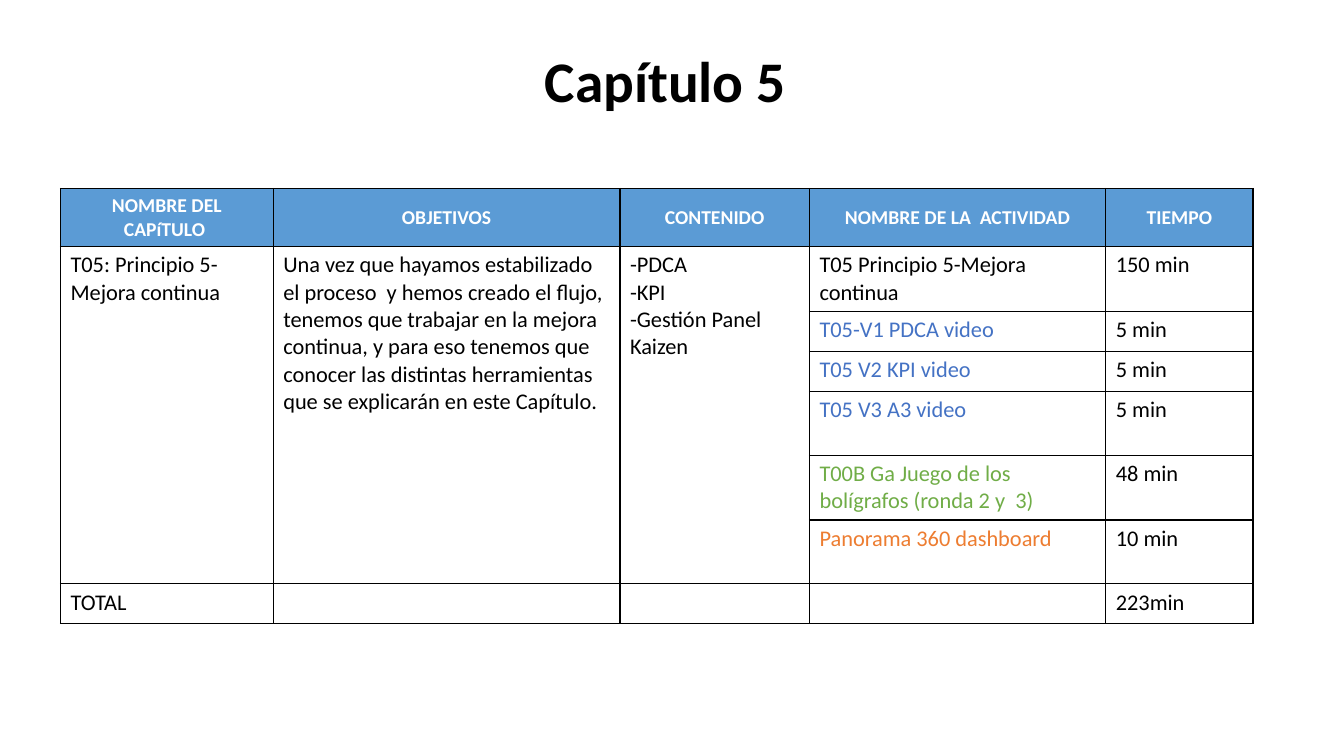
"""Builds the slide that lists the activities and times of Capítulo 5."""
import pptx
import pptx.dml.color
import pptx.enum.text
import pptx.oxml
import pptx.oxml.ns
import pptx.util

COLORS = {"black": "000000", "white": "FFFFFF", "header": "5B9BD5",
          "video": "4472C4", "game": "70AD47", "tour": "ED7D31"}
ALIGN = pptx.enum.text.PP_ALIGN
ANCHOR = pptx.enum.text.MSO_ANCHOR

HEADINGS = ["NOMBRE DEL CAPíTULO ", "OBJETIVOS", "CONTENIDO",
            "NOMBRE DE LA  ACTIVIDAD", "TIEMPO"]
CHAPTER = [
    ["T05: Principio 5-Mejora continua"],
    ["Una vez que hayamos estabilizado el proceso  y hemos creado el flujo, "
     "tenemos que trabajar en la mejora continua, y para eso tenemos que "
     "conocer las distintas herramientas que se explicarán en este Capítulo."],
    ["-PDCA", "-KPI", "-Gestión Panel Kaizen"],
]
ACTIVITIES = [
    ("T05 Principio 5-Mejora continua", "black", "150 min"),
    ("T05-V1 PDCA video", "video", "5 min"),
    ("T05 V2 KPI video", "video", "5 min"),
    ("T05 V3 A3 video", "video", "5 min"),
    ("T00B Ga Juego de los bolígrafos (ronda 2 y  3)", "game", "48 min"),
    ("Panorama 360 dashboard", "tour", "10 min"),
]
TOTALS = ["TOTAL", "", "", "", "223min"]
COLUMN_SHARES = [15.83, 25.8, 14.1, 22.05, 10.95]
HEADER_SHARE, TALL, SHORT = 7.5, 8.45, 5.3
ROW_SHARES = [HEADER_SHARE, TALL, SHORT, SHORT, TALL, TALL, TALL, SHORT]


class ChapterDeck:
    """Holds the style and the current slide; lengths are percent of the slide."""

    font = "Calibri"

    def __init__(self):
        self.deck = pptx.Presentation()
        self.deck.slide_width = pptx.util.Inches(13.33)
        self.deck.slide_height = pptx.util.Inches(7.5)
        self.slide = self.deck.slides.add_slide(self.deck.slide_layouts[6])

    def x(self, share):
        """Turns a percentage of the slide width into a length."""
        return round(self.deck.slide_width * share / 100)

    def y(self, share):
        """Turns a percentage of the slide height into a length."""
        return round(self.deck.slide_height * share / 100)

    def add_lines(self, frame, lines, size, color="black", bold=False, align=ALIGN.LEFT):
        """Sets each line as a paragraph with one styled run."""
        for index, line in enumerate(lines):
            paragraph = frame.add_paragraph() if index else frame.paragraphs[0]
            paragraph.alignment = align
            paragraph.font.size = pptx.util.Pt(size)
            if not line:
                continue
            run = paragraph.add_run()
            run.text = line
            run.font.name = self.font
            run.font.size = pptx.util.Pt(size)
            run.font.bold = bold
            run.font.color.rgb = pptx.dml.color.RGBColor.from_string(COLORS[color])

    def title(self, text, left, top, width, height):
        """Adds the centred slide title."""
        frame = self.slide.shapes.add_textbox(
            self.x(left), self.y(top), self.x(width), self.y(height)).text_frame
        frame.word_wrap = True
        frame.vertical_anchor = ANCHOR.TOP
        self.add_lines(frame, [text], 41, bold=True, align=ALIGN.CENTER)
        frame.paragraphs[0].line_spacing = 0.9

    def table(self, left, top, columns, rows):
        """Adds an empty table with white cells and black borders."""
        table = self.slide.shapes.add_table(
            len(rows), len(columns), self.x(left), self.y(top),
            self.x(sum(columns)), self.y(sum(rows))).table
        for column, share in zip(table.columns, columns):
            column.width = self.x(share)
        for row, share in zip(table.rows, rows):
            row.height = self.y(share)
        for cell in table.iter_cells():
            self.fill(cell, "white")
            self.border(cell)
        return table

    def fill(self, cell, color):
        """Fills a cell with one colour."""
        cell.fill.solid()
        cell.fill.fore_color.rgb = pptx.dml.color.RGBColor.from_string(COLORS[color])

    def border(self, cell):
        """Draws a thin black line on the four sides of a cell."""
        properties = cell._tc.get_or_add_tcPr()
        for index, side in enumerate(("lnL", "lnR", "lnT", "lnB")):
            properties.insert(index, pptx.oxml.parse_xml(
                f'<a:{side} {pptx.oxml.ns.nsdecls("a")} w="{pptx.util.Pt(1)}">'
                f'<a:solidFill><a:srgbClr val="{COLORS["black"]}"/></a:solidFill>'
                f'</a:{side}>'))

    def header(self, table, headings):
        """Fills the first row with the column headings."""
        for column, heading in enumerate(headings):
            cell = table.cell(0, column)
            self.fill(cell, "header")
            cell.vertical_anchor = ANCHOR.MIDDLE
            self.add_lines(cell.text_frame, [heading], 14, "white", True, ALIGN.CENTER)

    def entry(self, table, row, column, lines, color="black"):
        """Sets the text of one body cell."""
        self.add_lines(table.cell(row, column).text_frame, lines, 16, color)


def main():
    """Builds and saves the slide."""
    deck = ChapterDeck()
    plan = deck.table(4.5, 24.93, COLUMN_SHARES, ROW_SHARES)
    deck.header(plan, HEADINGS)
    for column, lines in enumerate(CHAPTER):
        plan.cell(1, column).merge(plan.cell(len(ACTIVITIES), column))
        deck.entry(plan, 1, column, lines)
    for row, (activity, color, minutes) in enumerate(ACTIVITIES, start=1):
        deck.entry(plan, row, 3, [activity], color)
        deck.entry(plan, row, 4, [minutes])
    for column, total in enumerate(TOTALS):
        deck.entry(plan, len(ACTIVITIES) + 1, column, [total])
    deck.title("Capítulo 5 ", 0, 6.4, 100, 17.47)
    deck.deck.save("out.pptx")


if __name__ == "__main__":
    main()
